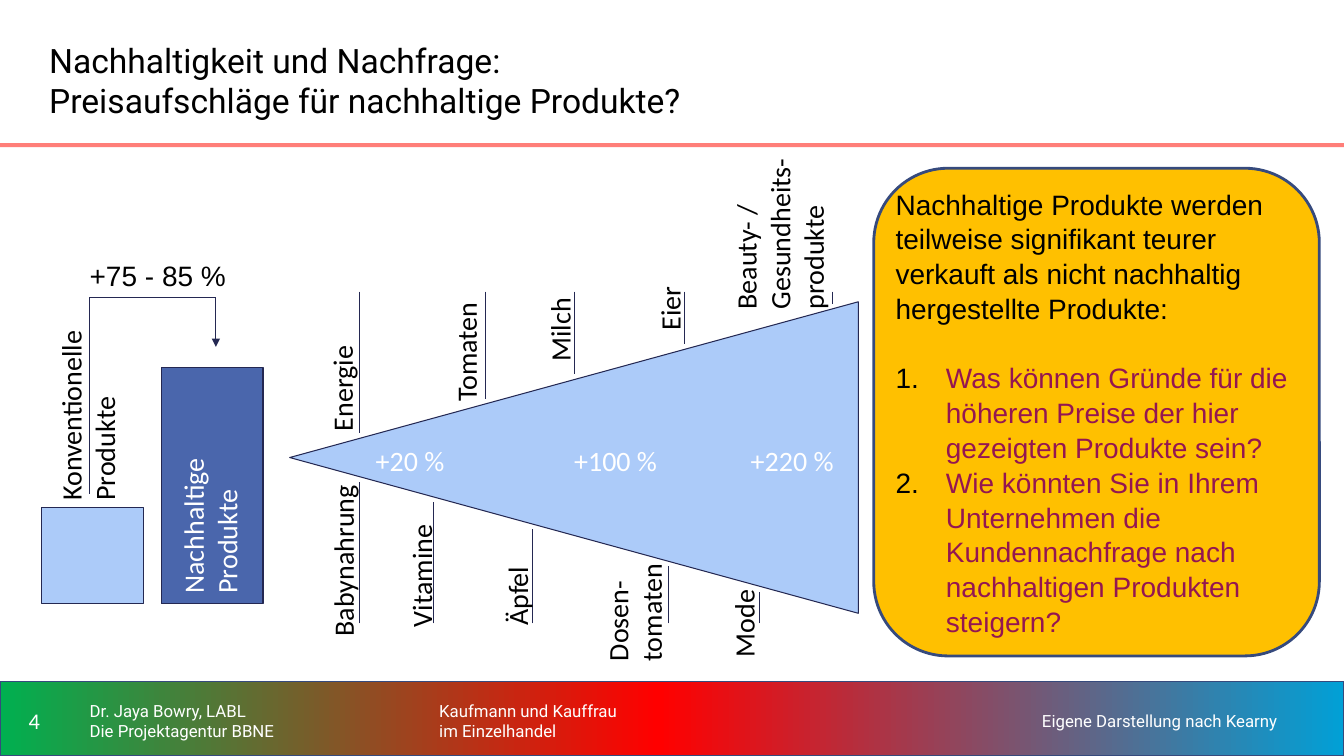
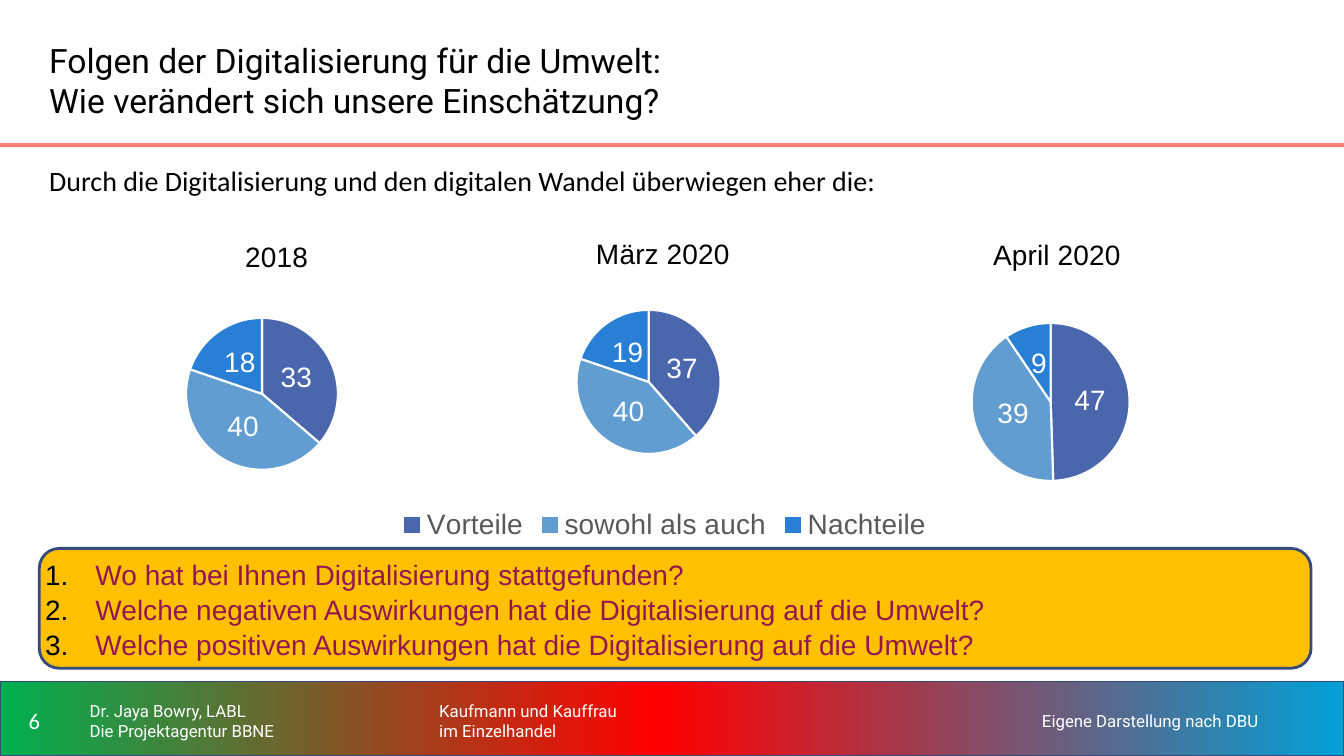
from copy import deepcopy
from dataclasses import dataclass

from pptx import Presentation
from pptx.chart.data import CategoryChartData
from pptx.dml.color import RGBColor
from pptx.enum.chart import XL_CHART_TYPE, XL_LABEL_POSITION, XL_LEGEND_POSITION
from pptx.enum.shapes import MSO_CONNECTOR, MSO_SHAPE
from pptx.enum.text import MSO_ANCHOR, PP_ALIGN
from pptx.oxml.ns import qn
from pptx.oxml.xmlchemy import OxmlElement
from pptx.util import Cm, Pt

PIE = XL_CHART_TYPE.PIE
LABEL_CENTER = XL_LABEL_POSITION.CENTER
LEGEND_BOTTOM = XL_LEGEND_POSITION.BOTTOM
STRAIGHT, ELBOW = MSO_CONNECTOR.STRAIGHT, MSO_CONNECTOR.ELBOW
RECT, ROUNDED = MSO_SHAPE.RECTANGLE, MSO_SHAPE.ROUNDED_RECTANGLE
MERGE = MSO_SHAPE.FLOWCHART_MERGE
TOP, MIDDLE = MSO_ANCHOR.TOP, MSO_ANCHOR.MIDDLE
LEFT, CENTER = PP_ALIGN.LEFT, PP_ALIGN.CENTER

SLIDE_WIDTH, SLIDE_HEIGHT = 33.87, 19.05


@dataclass(frozen=True)
class Theme:
    black: str = "000000"
    white: str = "FFFFFF"
    rule: str = "FF7E79"
    band: tuple = ((0, "00B050"), (0.49, "FF0000"), (1, "01A0D6"))
    outline: str = "364A7D"
    ink: str = "242852"
    light: str = "ACCBF9"
    dark: str = "4A66AC"
    panel: str = "FFC000"
    question: str = "941651"
    legend: str = "595959"
    slices: tuple = ("4A66AC", "629DD1", "297FD5")
    heading_font: str = "Roboto"
    label_font: str = "Calibri"
    body_font: str = "Arial"
    title_size: int = 24
    body_size: int = 20
    number_size: int = 16
    footer_size: int = 12
    thin: float = 0.75
    thick: float = 2


def rgb(value):
    return RGBColor.from_string(value)


def add_xml(parent, tag, **attributes):
    child = OxmlElement(tag)
    for key, value in attributes.items():
        child.set(key, str(value))
    parent.append(child)
    return child


def place(parent, index, frame, left, top, size=None):
    for old in parent.findall(qn("c:layout")):
        parent.remove(old)
    layout = OxmlElement("c:layout")
    parent.insert(index, layout)
    manual = add_xml(layout, "c:manualLayout")
    if size:
        add_xml(manual, "c:layoutTarget", val="inner")
    add_xml(manual, "c:xMode", val="edge")
    add_xml(manual, "c:yMode", val="edge")
    x, y, width, height = frame
    add_xml(manual, "c:x", val=round((left - x) / width, 4))
    add_xml(manual, "c:y", val=round((top - y) / height, 4))
    if size:
        add_xml(manual, "c:w", val=round(size / width, 4))
        add_xml(manual, "c:h", val=round(size / height, 4))


class Deck:
    def __init__(self, theme):
        self.theme = theme
        self.presentation = Presentation()
        self.presentation.slide_width = Cm(SLIDE_WIDTH)
        self.presentation.slide_height = Cm(SLIDE_HEIGHT)
        self.slide = None

    def new_slide(self, number, title, source):
        t = self.theme
        self.slide = self.presentation.slides.add_slide(self.presentation.slide_layouts[6])
        band = self.shape(RECT, (0, 17.17, SLIDE_WIDTH, 1.88), None, t.outline, 1)
        band.fill.gradient()
        band.fill.gradient_angle = 0
        stops = next(band._element.iter(qn("a:gsLst")))
        stops.insert(1, deepcopy(stops[0]))
        for stop, (position, color) in zip(band.fill.gradient_stops, t.band):
            stop.position = position
            stop.color.rgb = rgb(color)
        self.shape(RECT, (0, 3.61, SLIDE_WIDTH, 0.1), t.rule)
        self.text((0.99, 0.51, 25, 3), title, t.heading_font, t.title_size, anchor=MIDDLE)
        self.text((0, 17.37, 1.73, 1.55), [number], t.label_font, t.number_size, t.white, MIDDLE, CENTER)
        footers = (
            (2.01, 7.06, ["Dr. Jaya Bowry, LABL", "Die Projektagentur BBNE"]),
            (10.82, 7.87, ["Kaufmann und Kauffrau", "im Einzelhandel"]),
            (26.01, 7.06, [source]),
        )
        for left, width, lines in footers:
            self.text((left, 17.37, width, 1.57), lines, t.heading_font, t.footer_size, t.white, MIDDLE)

    def style_font(self, font, name, size, color):
        font.name = name
        font.size = Pt(size)
        font.color.rgb = rgb(color)

    def add_run(self, paragraph, text, name, size, color):
        run = paragraph.add_run()
        run.text = text
        self.style_font(run.font, name, size, color)

    def shape(self, preset, box, fill, line=None, weight=None):
        shape = self.slide.shapes.add_shape(preset, *map(Cm, box))
        shape.shadow.inherit = False
        if fill:
            shape.fill.solid()
            shape.fill.fore_color.rgb = rgb(fill)
        if line:
            shape.line.color.rgb = rgb(line)
            shape.line.width = Pt(weight)
        else:
            shape.line.fill.background()
        return shape

    def text(self, box, lines, font, size, color=None, anchor=TOP, align=LEFT, inset=None):
        area = self.slide.shapes.add_textbox(*map(Cm, box))
        frame = area.text_frame
        frame.word_wrap = True
        frame.vertical_anchor = anchor
        if inset is not None:
            frame.margin_left = frame.margin_right = Cm(inset)
            frame.margin_top = frame.margin_bottom = Cm(inset)
        for index, line in enumerate(lines):
            paragraph = frame.add_paragraph() if index else frame.paragraphs[0]
            paragraph.alignment = align
            self.add_run(paragraph, line, font, size, color or self.theme.black)
        return area

    def label(self, box, text, font=None, color=None):
        t = self.theme
        return self.text(box, [text], font or t.label_font, t.body_size, color, inset=0.25)

    def upright_label(self, text, center_x, center_y, length, rows=1, color=None):
        depth = 0.5 + 0.87 * rows
        box = (center_x - length / 2, center_y - depth / 2, length, depth)
        self.label(box, text, color=color).rotation = 270

    def line(self, start, end, kind=STRAIGHT, arrow=False):
        connector = self.slide.shapes.add_connector(kind, *map(Cm, start + end))
        connector.line.color.rgb = rgb(self.theme.ink)
        connector.line.width = Pt(self.theme.thin)
        if arrow:
            add_xml(connector.line._get_or_add_ln(), "a:tailEnd", type="triangle")
        add_xml(connector._element.spPr, "a:effectLst")
        return connector

    def bracket(self, left, top, width, height):
        center_x, center_y = left + width / 2, top + height / 2
        start = (center_x - height / 2, center_y - width / 2)
        end = (center_x + height / 2, center_y + width / 2)
        properties = self.line(start, end, ELBOW)._element.spPr
        properties.find(qn("a:xfrm")).set("rot", str(90 * 60000))
        geometry = properties.find(qn("a:prstGeom"))
        for old in geometry.findall(qn("a:avLst")):
            geometry.remove(old)
        add_xml(add_xml(geometry, "a:avLst"), "a:gd", name="adj1", fmla="val 0")

    def question_panel(self, box, questions, intro=None):
        t = self.theme
        panel = self.shape(ROUNDED, box, t.panel, t.outline, t.thick)
        panel.adjustments[0] = 0.167
        frame = panel.text_frame
        frame.word_wrap = True
        frame.vertical_anchor = MIDDLE
        frame.margin_left = frame.margin_right = frame.margin_top = frame.margin_bottom = 0
        entries = [(intro, False)] if intro else []
        entries += [(question, True) for question in questions]
        for index, (entry, numbered) in enumerate(entries):
            paragraph = frame.add_paragraph() if index else frame.paragraphs[0]
            paragraph.alignment = LEFT
            paragraph.line_spacing = 1.04
            if intro and index == 1:
                paragraph.space_before = Pt(24)
            if numbered:
                properties = paragraph._p.get_or_add_pPr()
                properties.set("marL", str(Cm(1.27)))
                properties.set("indent", str(-Cm(1.27)))
                add_xml(add_xml(properties, "a:buClr"), "a:srgbClr", val=t.black)
                add_xml(properties, "a:buFont", typeface=t.body_font)
                add_xml(properties, "a:buAutoNum", type="arabicPeriod")
            self.add_run(paragraph, entry, t.body_font, t.body_size, t.question if numbered else t.black)

    def pie(self, title, values, frame, title_at, circle, legend_at=None):
        t = self.theme
        data = CategoryChartData()
        data.categories = ["Vorteile", "sowohl als auch", "Nachteile"]
        data.add_series(title, values)
        chart = self.slide.shapes.add_chart(PIE, *map(Cm, frame), data).chart
        space = chart._chartSpace
        background = OxmlElement("c:spPr")
        add_xml(background, "a:noFill")
        add_xml(add_xml(background, "a:ln"), "a:noFill")
        space.find(qn("c:chart")).addnext(background)
        self.style_font(chart.font, t.body_font, t.body_size, t.black)
        chart.has_title = True
        heading = chart.chart_title.text_frame.paragraphs[0]
        self.add_run(heading, title, t.body_font, t.body_size, t.black)
        heading.runs[0].font.bold = False
        place(chart.chart_title._element, 1, frame, *title_at)
        place(next(space.iter(qn("c:plotArea"))), 0, frame, *circle)
        plot = chart.plots[0]
        plot.vary_by_categories = True
        plot.has_data_labels = True
        labels = plot.data_labels
        labels.show_value = True
        labels.show_percentage = False
        labels.position = LABEL_CENTER
        self.style_font(labels.font, t.body_font, t.body_size, t.white)
        for index, color in enumerate(t.slices):
            part = plot.series[0].points[index].format
            part.fill.solid()
            part.fill.fore_color.rgb = rgb(color)
            part.line.color.rgb = rgb(t.white)
            part.line.width = Pt(1.5)
        chart.has_legend = legend_at is not None
        if legend_at:
            chart.legend.position = LEGEND_BOTTOM
            chart.legend.include_in_layout = False
            self.style_font(chart.legend.font, t.body_font, t.body_size, t.legend)
            place(chart.legend._element, 1, frame, *legend_at)


def build_prices(deck):
    t = deck.theme
    deck.new_slide("4", ["Nachhaltigkeit und Nachfrage:", "Preisaufschläge für nachhaltige Produkte?"],
                   "Eigene Darstellung nach Kearny")
    bar_bottom = 15.22
    for left, height, color in ((1.05, 2.44, t.light), (4.06, 5.97, t.dark)):
        deck.shape(RECT, (left, bar_bottom - height, 2.57, height), color, t.ink, t.thin)
    deck.upright_label("Konventionelle Produkte", 2.22, 10.44, 4.85, 2)
    deck.upright_label("Nachhaltige Produkte", 5.3, 13.11, 4.19, 2, t.white)
    deck.bracket(2.26, 7.49, 3.18, 4.95)
    deck.line((5.44, 7.49), (5.44, 8.74), arrow=True)
    deck.label((2.01, 6.27, 4.22, 1.37), "+75 - 85 %", t.body_font)

    tip_x, axis_y, length, opening = 7.3, 11.53, 14.33, 7.85
    wedge_box = (tip_x + (length - opening) / 2, axis_y - length / 2, opening, length)
    deck.shape(MERGE, wedge_box, t.light, t.ink, t.thin).rotation = 90
    for left, markup in ((9.22, "+20 %"), (14.22, "+100 %"), (18.67, "+220 %")):
        deck.label((left, 10.92, 2.72, 1.37), markup, color=t.white)

    above, below = (-1, 7.35), (1, 15.71)
    products = (
        ("Energie", above, 9.07, 8.62, 9.7, 2.82, 1),
        ("Tomaten", above, 12.24, 11.75, 8.71, 3.33, 1),
        ("Milch", above, 14.48, 14.11, 8.18, 2.36, 1),
        ("Eier", above, 17.25, 16.88, 7.65, 1.85, 1),
        ("Beauty- / Gesundheits-produkte", above, 20.97, 19.67, 5.77, 4.55, 3),
        ("Babynahrung", below, 9.07, 8.65, 14.12, 4.34, 1),
        ("Vitamine", below, 10.92, 10.62, 14.17, 3.76, 1),
        ("Äpfel", below, 13.41, 13.04, 14.81, 2.41, 1),
        ("Dosen-tomaten", below, 16.84, 16, 15.21, 3.4, 2),
        ("Mode", below, 19.15, 18.75, 15.67, 2.29, 1),
    )
    for product, (side, outer_y), line_x, center_x, center_y, extent, rows in products:
        edge_y = axis_y + side * ((line_x - tip_x) * opening / length / 2 + 0.13)
        deck.line((line_x, outer_y), (line_x, edge_y))
        deck.upright_label(product, center_x, center_y, extent, rows)

    deck.question_panel(
        (22.02, 4.24, 11.23, 12.29),
        ["Was können Gründe für die höheren Preise der hier gezeigten Produkte sein?",
         "Wie könnten Sie in Ihrem Unternehmen die Kundennachfrage nach nachhaltigen Produkten steigern?"],
        "Nachhaltige Produkte werden teilweise signifikant teurer verkauft als nicht nachhaltig "
        "hergestellte Produkte:")


def build_digitalisation(deck):
    deck.new_slide("6", ["Folgen der Digitalisierung für die Umwelt:", "Wie verändert sich unsere Einschätzung?"],
                   "Eigene Darstellung nach DBU")
    deck.label((0.99, 3.86, 25.73, 1.37),
               "Durch die Digitalisierung und den digitalen Wandel überwiegen eher die:")
    deck.pie("März 2020", (37, 40, 19), (1.45, 5.38, 30.28, 8.41), (14.89, 5.82), (14.53, 7.81, 3.63), (9.95, 12.75))
    deck.pie("2018", (33, 40, 18), (1.45, 5.44, 10.77, 7.57), (6.05, 5.9), (4.69, 8.01, 3.83))
    deck.pie("April 2020", (47, 39, 9), (20.6, 5.38, 11.84, 7.16), (24.9, 5.85), (24.49, 8.14, 3.98))
    deck.question_panel(
        (0.99, 13.82, 32.05, 3.02),
        ["Wo hat bei Ihnen Digitalisierung stattgefunden?",
         "Welche negativen Auswirkungen hat die Digitalisierung auf die Umwelt?",
         "Welche positiven Auswirkungen hat die Digitalisierung auf die Umwelt?"])


def main():
    deck = Deck(Theme())
    build_prices(deck)
    build_digitalisation(deck)
    deck.presentation.save("out.pptx")


if __name__ == "__main__":
    main()
